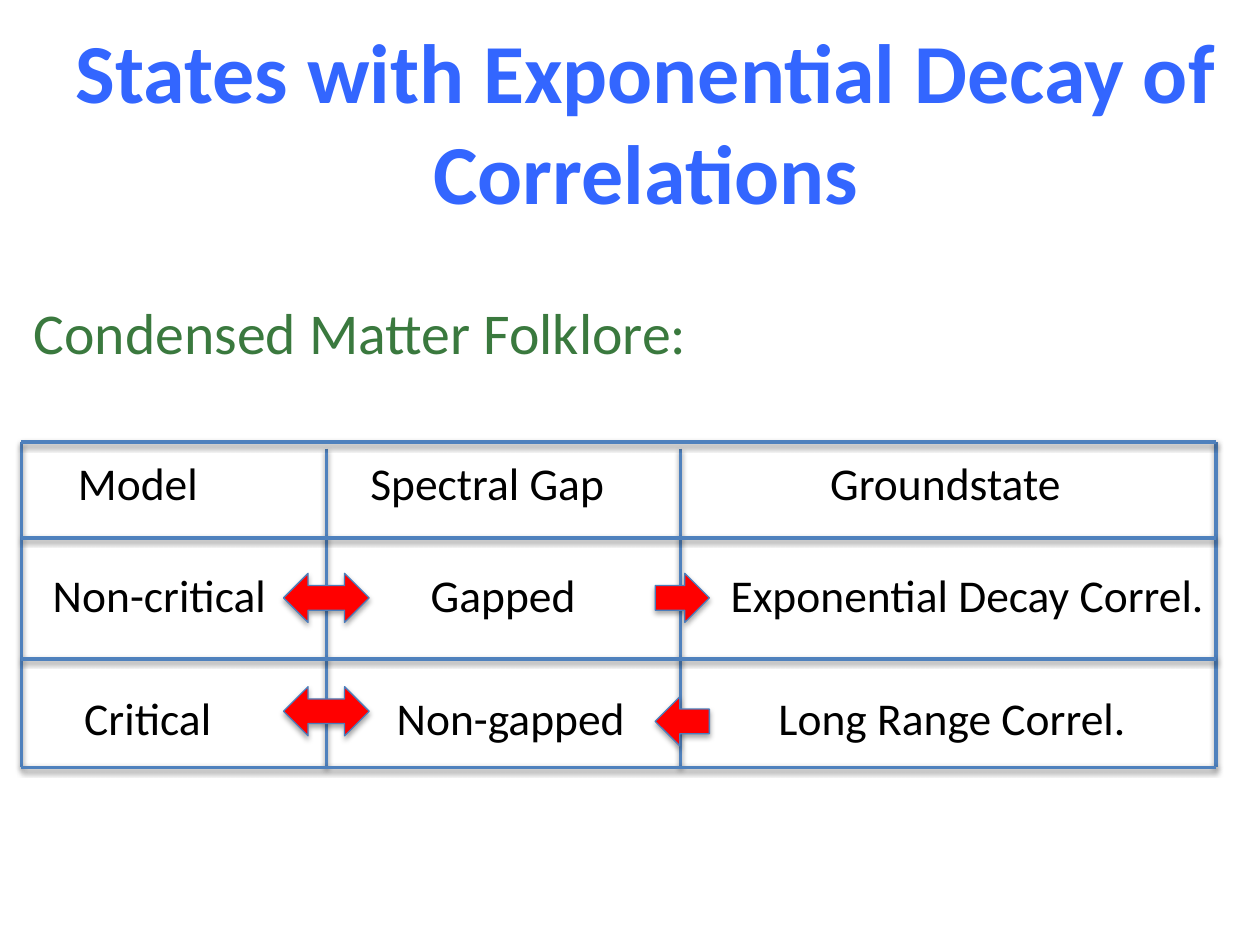
from lxml import etree
from pptx import Presentation
from pptx.dml.color import RGBColor
from pptx.enum.shapes import MSO_CONNECTOR, MSO_SHAPE
from pptx.enum.text import MSO_ANCHOR, PP_ALIGN
from pptx.oxml.ns import qn
from pptx.util import Inches, Pt

STRAIGHT = MSO_CONNECTOR.STRAIGHT
BOTH, RIGHT = MSO_SHAPE.LEFT_RIGHT_ARROW, MSO_SHAPE.RIGHT_ARROW
TOP, MIDDLE = MSO_ANCHOR.TOP, MSO_ANCHOR.MIDDLE
LEFT, CENTER = PP_ALIGN.LEFT, PP_ALIGN.CENTER

FONT = "Calibri"
COLORS = {
    "title": "3366FF",
    "heading": "3A793E",
    "text": "000000",
    "grid": "4F81BD",
    "arrow": "FF0000",
    "arrow_line": "4B7EBC",
    "shadow": "000000",
}


def rgb(name):
    """Return the named colour."""
    return RGBColor.from_string(COLORS[name])


def add_shadow(s, distance, opacity):
    """Give a shape or connector a soft shadow straight below it."""
    effects = etree.SubElement(s._element.spPr, qn("a:effectLst"))
    shadow = etree.SubElement(
        effects, qn("a:outerShdw"), blurRad=str(Pt(3.1)), dist=str(Pt(distance)),
        dir="5400000", rotWithShape="0")
    color = etree.SubElement(shadow, qn("a:srgbClr"), val=COLORS["shadow"])
    etree.SubElement(color, qn("a:alpha"), val=str(opacity * 1000))


def add_text(slide, box, text, size, color, bold=False, align=LEFT, anchor=TOP):
    """Add a wrapping text box and return its text frame."""
    tf = slide.shapes.add_textbox(*map(Inches, box)).text_frame
    tf.word_wrap = True
    tf.vertical_anchor = anchor
    tf.text = text
    for p in tf.paragraphs:
        p.alignment = align
        for r in p.runs:
            r.font.name, r.font.size, r.font.bold = FONT, Pt(size), bold
            r.font.color.rgb = rgb(color)
    return tf


def set_tabs(p, stops):
    """Set left tab stops, in inches from the text edge."""
    tabs = etree.SubElement(p._p.get_or_add_pPr(), qn("a:tabLst"))
    for stop in stops:
        etree.SubElement(tabs, qn("a:tab"), pos=str(Inches(stop)), algn="l")


def add_rows(slide, box, rows):
    """Write table rows in one text box, each with its own tab stops."""
    text = "\n".join("\t" + "\t".join(cells) for cells, _ in rows)
    tf = add_text(slide, box, text, 26, "text")
    for p, (_, stops) in zip(tf.paragraphs, rows):
        set_tabs(p, stops)
    return tf


def add_line(slide, x1, y1, x2, y2):
    """Draw one grid line."""
    line = slide.shapes.add_connector(STRAIGHT, *map(Inches, (x1, y1, x2, y2)))
    line.line.color.rgb = rgb("grid")
    line.line.width = Pt(2)
    add_shadow(line, 1.6, 38)


def add_grid(slide, box, columns, rows):
    """Draw the frame and the inner lines at the given offsets."""
    x, y, w, h = box
    for dx in (0, *columns, w):
        top = y + 0.05 if dx in columns else y
        add_line(slide, x + dx, top, x + dx, y + h)
    for dy in (0, *rows, h):
        add_line(slide, x, y + dy, x + w, y + dy)


def add_arrow(slide, kind, box, rotation=0):
    """Add a red block arrow."""
    sp = slide.shapes.add_shape(kind, *map(Inches, box))
    sp.rotation = rotation
    sp.fill.solid()
    sp.fill.fore_color.rgb = rgb("arrow")
    sp.line.color.rgb = rgb("arrow_line")
    sp.line.width = Pt(0.75)
    add_shadow(sp, 1.8, 35)


def add_folklore_table(slide, box):
    """Place the table's text, grid and implication arrows in the box."""
    x, y, w, h = box
    body = add_rows(slide, (x, y + 0.89, 9.62, 1.57), [
        (("Non-critical", "Gapped", "Exponential Decay Correl."), (0.15, 3.15, 5.53)),
        (("Critical", "Non-gapped", "Long Range Correl."), (0.4, 2.88, 5.91)),
    ])
    body.margin_top = Inches(0.1)
    body.paragraphs[1].space_before = Pt(39)
    add_grid(slide, box, columns=(2.42, 5.23), rows=(0.76, 1.72))
    for dy in (1.04, 1.94):
        add_arrow(slide, BOTH, (x + 2.08, y + dy, 0.68, 0.39))
    for dy, rotation in ((1.04, 0), (2.02, 180)):
        add_arrow(slide, RIGHT, (x + 5.03, y + dy, 0.43, 0.39), rotation)
    add_rows(slide, (x + 0.12, y + 0.05, w - 0.13, 0.54), [
        (("Model", "Spectral Gap", "Groundstate"), (0.23, 2.55, 6.2)),
    ])


def main():
    """Build and save the slide."""
    prs = Presentation()
    prs.slide_width, prs.slide_height = Inches(10), Inches(7.5)
    slide = prs.slides.add_slide(prs.slide_layouts[6])
    add_text(slide, (0.17, 0, 9.91, 1.91), "States with Exponential Decay of Correlations",
             48, "title", bold=True, align=CENTER, anchor=MIDDLE)
    add_text(slide, (0.17, 2.31, 10, 1.78), "Condensed Matter Folklore:", 33, "heading")
    add_folklore_table(slide, (0.17, 3.51, 9.48, 2.58))
    prs.save("out.pptx")


if __name__ == "__main__":
    main()
